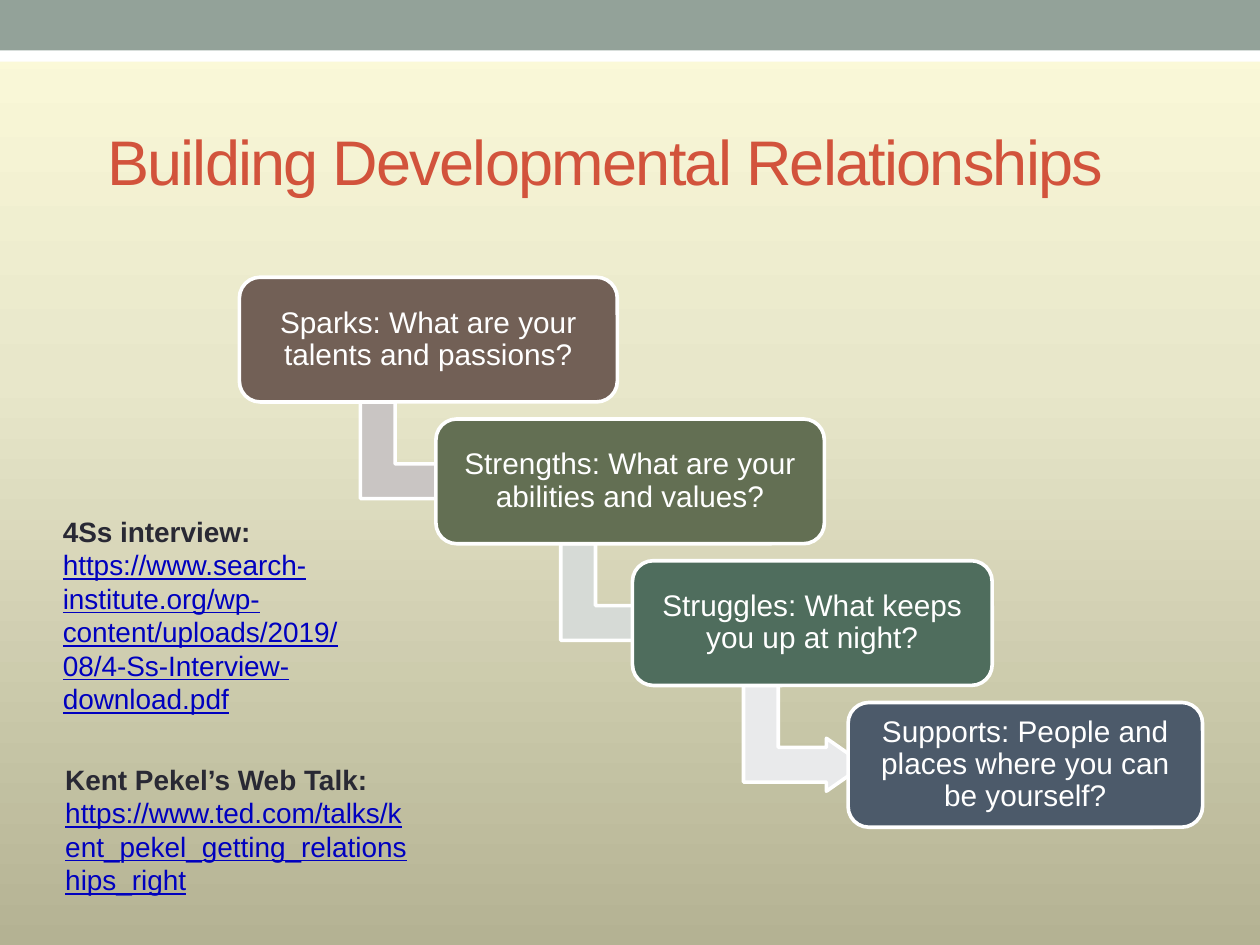
import copy

import pptx
import pptx.dml.color
import pptx.enum.shapes
import pptx.enum.text
import pptx.util
from pptx.util import Pt

SHAPE = pptx.enum.shapes.MSO_SHAPE
MIDDLE = pptx.enum.text.MSO_ANCHOR.MIDDLE
CENTER = pptx.enum.text.PP_ALIGN.CENTER
LEFT = pptx.enum.text.PP_ALIGN.LEFT


def rgb(value):
    return pptx.dml.color.RGBColor.from_string(value)


def add_run(p, text, size, color):
    r = p.add_run()
    r.text = text
    r.font.name = "Arial"
    r.font.size = Pt(size)
    r.font.color.rgb = rgb(color)
    return r


prs = pptx.Presentation()
prs.slide_width, prs.slide_height = Pt(720), Pt(540)
s = prs.slides.add_slide(prs.slide_layouts[5])

# Background gradient, light at the top
fill = s.background.fill
fill.gradient()
fill.gradient_angle = 270
stop_list = fill.gradient_stops[0]._gs.getparent()
stop_list.append(copy.deepcopy(stop_list[-1]))
stops = [(0, "FDFBDA"), (0.4, "E8E7CA"), (1, "B4B293")]
for stop, (position, color) in zip(fill.gradient_stops, stops):
    stop.position = position
    stop.color.rgb = rgb(color)

# Top bands
for top, height, color in [(17.3, 18, "FFFFFF"), (0, 28.8, "93A299")]:
    sp = s.shapes.add_shape(SHAPE.RECTANGLE, 0, Pt(top), Pt(720), Pt(height))
    sp.shadow.inherit = False
    sp.fill.solid()
    sp.fill.fore_color.rgb = rgb(color)
    sp.line.fill.background()

# Title
title = s.shapes.title
title.left, title.top, title.width, title.height = Pt(54), Pt(47.5), Pt(612), Pt(67)
tf = title.text_frame
tf.auto_size = pptx.enum.text.MSO_AUTO_SIZE.NONE
tf.vertical_anchor = MIDDLE
tf.margin_top = Pt(25)
p = tf.paragraphs[0]
p.alignment = LEFT
r = add_run(p, "Building Developmental Relationships", 36, "D2533C")
r.font._element.set("spc", "-100")

# Staircase: box left, width, colour, text, then arrow left and colour
steps = [
    (136.8, 216, "726056", "Sparks: What are your talents and passions?", 210.2, "C9C5C3"),
    (249.1, 222, "636F53", "Strengths: What are your abilities and values?", 324.7, "D6DAD6"),
    (361.4, 205.6, "4F6D5D", "Struggles: What keeps you up at night?", 429.1, "E9EAEB"),
    (484.6, 202.6, "4C5A6A", "Supports: People and places where you can be yourself?", None, None),
]
FIRST_TOP, STEP, BOX_HEIGHT = 158.4, 81, 71.3
for i, (left, width, color, text, arrow_left, arrow_color) in enumerate(steps):
    top = FIRST_TOP + i * STEP
    box = s.shapes.add_shape(SHAPE.ROUNDED_RECTANGLE, Pt(left), Pt(top), Pt(width), Pt(BOX_HEIGHT))
    box.adjustments[0] = 0.167
    parts = [(box, color)]
    if arrow_left is not None:
        arrow = s.shapes.add_shape(SHAPE.BENT_UP_ARROW, Pt(arrow_left), Pt(top + 67), Pt(60.5), Pt(69))
        arrow.rotation = 90
        for n, value in enumerate([0.328, 0.25, 0.358]):
            arrow.adjustments[n] = value
        box._element.addprevious(arrow._element)
        parts.append((arrow, arrow_color))
    for sp, part_color in parts:
        sp.shadow.inherit = False
        sp.fill.solid()
        sp.fill.fore_color.rgb = rgb(part_color)
        sp.line.color.rgb = rgb("FFFFFF")
        sp.line.width = Pt(2.08)
    tf = box.text_frame
    tf.word_wrap = True
    tf.vertical_anchor = MIDDLE
    tf.margin_left = tf.margin_right = tf.margin_top = tf.margin_bottom = Pt(5)
    p = tf.paragraphs[0]
    p.alignment = CENTER
    p.line_spacing = 0.9
    add_run(p, text, 17, "FFFFFF")

# Resource links
resources = [
    (30.2, 432, 209.5, 85, "Kent Pekel’s Web Talk: ",
     "https://www.ted.com/talks/kent_pekel_getting_relationships_right"),
    (28.8, 290.2, 175, 123.8, "4Ss interview: ",
     "https://www.search-institute.org/wp-content/uploads/2019/08/4-Ss-Interview-download.pdf"),
]
for left, top, width, height, heading, address in resources:
    tf = s.shapes.add_textbox(Pt(left), Pt(top), Pt(width), Pt(height)).text_frame
    tf.word_wrap = True
    p = tf.paragraphs[0]
    add_run(p, heading, 16, "292934").font.bold = True
    add_run(p, address, 16, "0000BF").font.underline = True

prs.save("out.pptx")
